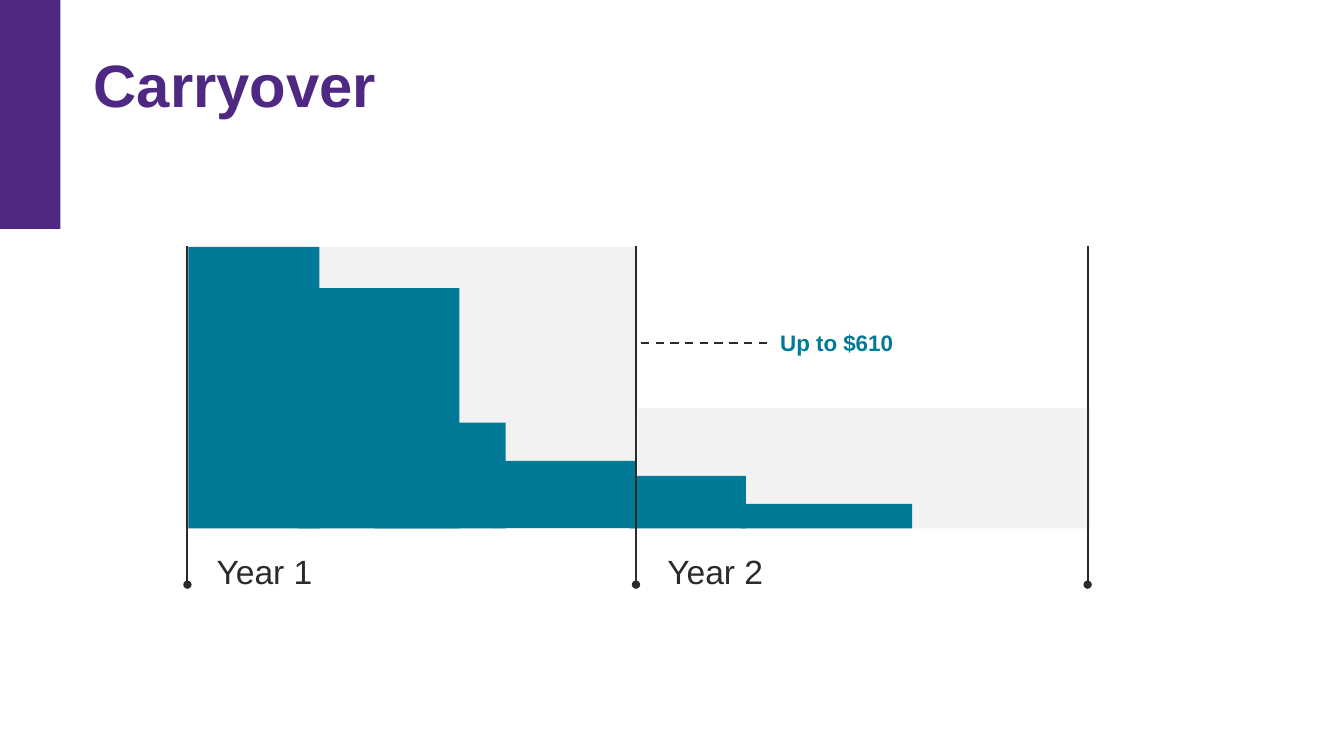
from lxml.etree import SubElement
from pptx import Presentation
from pptx.dml.color import RGBColor
from pptx.enum.dml import MSO_LINE
from pptx.enum.shapes import MSO_CONNECTOR, MSO_SHAPE
from pptx.enum.text import MSO_ANCHOR, MSO_AUTO_SIZE, PP_ALIGN
from pptx.oxml.ns import qn
from pptx.util import Pt

PURPLE, TEAL, GREY, INK = "4F2883", "007A96", "F2F2F2", "2A2C2C"


def rgb(hex_color):
    """Turn a hex string into a colour."""
    return RGBColor.from_string(hex_color)


def write(sp, text, size=24, color=INK, bold=False, inset=9.36, spacing=1.0):
    """Put one formatted, left-aligned paragraph into a shape."""
    tf = sp.text_frame
    tf.word_wrap = True
    tf.auto_size = MSO_AUTO_SIZE.SHAPE_TO_FIT_TEXT
    tf.vertical_anchor = MSO_ANCHOR.TOP
    tf.margin_left = tf.margin_right = tf.margin_top = tf.margin_bottom = Pt(inset)
    p = tf.paragraphs[0]
    p.alignment = PP_ALIGN.LEFT
    p.line_spacing = spacing
    r = p.add_run()
    r.text = text
    r.font.name, r.font.size, r.font.bold = "Arial", Pt(size), bold
    r.font.color.rgb = rgb(color)


def add_label(s, x, y, w, h, text, **fmt):
    """Add a text box with formatted text."""
    write(s.shapes.add_textbox(Pt(x), Pt(y), Pt(w), Pt(h)), text, **fmt)


def add_block(s, x, y, w, h, color, kind=MSO_SHAPE.RECTANGLE):
    """Add a plain filled shape without outline or shadow."""
    sp = s.shapes.add_shape(kind, Pt(x), Pt(y), Pt(w), Pt(h))
    sp.shadow.inherit = False
    sp.fill.solid()
    sp.fill.fore_color.rgb = rgb(color)
    sp.line.fill.background()
    return sp


def add_line(s, x1, y1, x2, y2, dashed=False, dot=False):
    """Add a thin line, optionally dashed or ending in a dot."""
    c = s.shapes.add_connector(MSO_CONNECTOR.STRAIGHT, Pt(x1), Pt(y1), Pt(x2), Pt(y2))
    c.line.color.rgb = rgb(INK)
    c.line.width = Pt(1.5)
    if dashed:
        c.line.dash_style = MSO_LINE.DASH
    if dot:
        SubElement(c.line._get_or_add_ln(), qn("a:tailEnd"), type="oval")
    SubElement(c._element.spPr, qn("a:effectLst"))


def add_header(s, x, y, w, h):
    """Place the corner band and the title beside it."""
    add_block(s, x, y, 43.2, h, PURPLE)
    title = s.shapes.title
    title.left, title.top = Pt(x + 67), Pt(y + 28.8)
    title.width, title.height = Pt(w - 107), Pt(53.3)
    write(title, "Carryover", size=42.7, color=PURPLE, bold=True, inset=0, spacing=1.1)


def add_year(s, x, y, w, h, name, label_x, panel_x, bars):
    """Draw one year: its grey panel, falling balance bars and name."""
    base = y + h
    panel = add_block(s, x + panel_x, y, w, h, GREY, MSO_SHAPE.PENTAGON)
    panel.adjustments[0] = 0
    for bar_x, bar_w, bar_h in bars:
        add_block(s, x + bar_x, base - bar_h, bar_w, bar_h, TEAL)
    add_label(s, x + label_x, base + 6.4, 300, 48.2, name)


def add_timeline(s, x, y, w, h):
    """Draw both years, the carryover callout and the year boundaries."""
    mid, end, base = x + 320.4, x + w, y + h
    year_w = end - mid
    add_year(s, x, y, year_w, h, "Year 1", 11.4, -1.4,
             [(0.7, 93.6, h), (79.1, 115.2, 171.6), (133.8, 93.6, 75.6), (218.1, 101.5, 48.2)])
    add_year(s, mid, base - 85.7, year_w, 85.7, "Year 2", 13, 1.5,
             [(-4.3, 82.8, 37.4), (74.9, 122.4, 17.4)])
    add_line(s, mid + 93.6, y + 68.6, mid, y + 68.6, dashed=True)
    add_label(s, mid + 93.6, y + 49, 246.2, 38.9, "Up to $610", size=16, color=TEAL, bold=True)
    for line_x in (x, mid, end):
        add_line(s, line_x, y - 0.7, line_x, base + 40.2, dot=True)


def main():
    """Build the slide and save it."""
    prs = Presentation()
    prs.slide_width, prs.slide_height = Pt(960), Pt(540)
    s = prs.slides.add_slide(prs.slide_layouts[5])
    add_header(s, 0, 0, 960, 163.5)
    add_timeline(s, 133.9, 176.4, 643, 201)
    prs.save("out.pptx")


if __name__ == "__main__":
    main()
